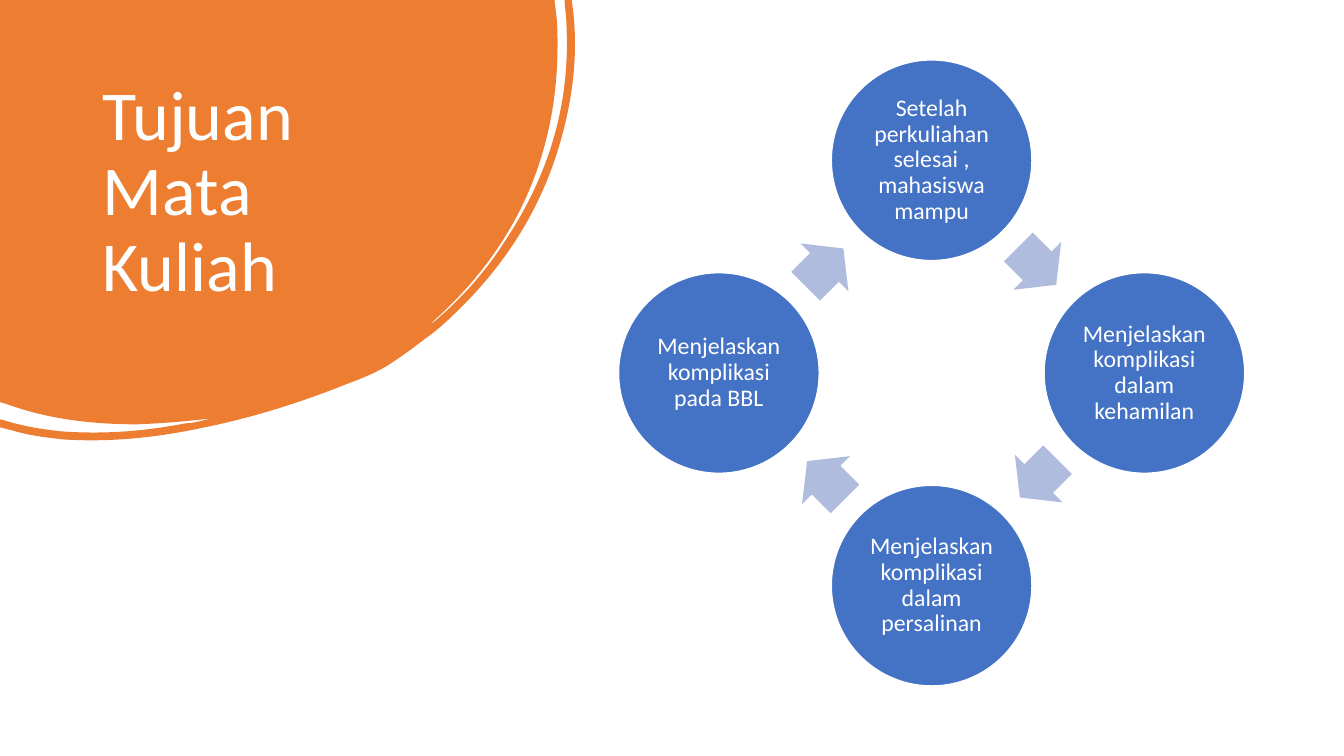
import math

from lxml import etree
from pptx import Presentation
from pptx.dml.color import RGBColor
from pptx.enum import shapes, text
from pptx.oxml.ns import qn
from pptx.util import Inches, Pt

# Content
TITLE = "Tujuan Mata Kuliah"
STEPS = [  # clockwise from the top
    "Setelah perkuliahan selesai , mahasiswa mampu",
    "Menjelaskan komplikasi dalam kehamilan",
    "Menjelaskan komplikasi dalam persalinan",
    "Menjelaskan komplikasi pada BBL",
]

THEME = {
    "font": "Calibri", "title_size": 50, "step_size": 17,
    "white": "FFFFFF", "blob": "ED7D31", "circle": "4472C4", "arrow": "B0BCDE",
}

# Blob outline in inches: two numbers are a line end, six are a Bézier curve
BLOB_WIDTH, BLOB_HEIGHT = 5.71, 4.37
BLOB = [
    (0, 0), (5.5, 0), (5.52, 0.17),
    (5.53, 0.26, 5.53, 0.36, 5.53, 0.45), (5.53, 1.01, 5.42, 1.54, 5.18, 2.04),
    (4.96, 2.49, 4.65, 2.88, 4.27, 3.21), (4.29, 3.21, 4.3, 3.19, 4.32, 3.18),
    (4.59, 2.95, 4.82, 2.69, 5.01, 2.39), (5.43, 1.76, 5.65, 1.07, 5.62, 0.3),
    (5.62, 0.21, 5.61, 0.12, 5.6, 0.03), (5.6, 0), (5.67, 0), (5.68, 0.07),
    (5.74, 0.54, 5.68, 1.02, 5.53, 1.5), (5.33, 2.14, 4.97, 2.68, 4.48, 3.14),
    (4.39, 3.23, 4.29, 3.31, 4.19, 3.38), (4.09, 3.46, 3.99, 3.53, 3.87, 3.61),
    (3.75, 3.69, 3.6, 3.75, 3.44, 3.81), (2.99, 3.99, 2.52, 4.14, 2.03, 4.24),
    (1.57, 4.34, 1.1, 4.39, 0.63, 4.36), (0.45, 4.34, 0.28, 4.32, 0.12, 4.27),
    (0, 4.24), (0, 4.16), (0.04, 4.17),
    (0.23, 4.23, 0.42, 4.26, 0.61, 4.28), (1.03, 4.31, 1.43, 4.28, 1.84, 4.2),
    (1.89, 4.2, 1.93, 4.19, 1.98, 4.18), (2.02, 4.17, 2.06, 4.16, 2.1, 4.15),
    (1.86, 4.18, 1.61, 4.2, 1.36, 4.21), (0.92, 4.21, 0.48, 4.16, 0.07, 4.01),
    (0, 3.99),
]

# Ring of circles, in inches
CENTER_X, CENTER_Y, RADIUS = 9.24, 3.7, 2.11
CIRCLE = 1.99
ARROW_WIDTH, ARROW_HEIGHT = 0.53, 0.67
ARROW_LAG = 0.01  # arrows sit slightly behind the midpoint


def color(name):
    return RGBColor.from_string(THEME[name])


def add_blob(page):
    """Draw the outline through its end points, then bend the curved parts."""
    ends = [(Inches(part[-2]), Inches(part[-1])) for part in BLOB]
    builder = page.shapes.build_freeform(*ends[0])
    builder.add_line_segments(ends[1:], close=True)
    blob = builder.convert_to_shape()
    blob.width, blob.height = Inches(BLOB_WIDTH), Inches(BLOB_HEIGHT)

    outline = next(blob.element.iter(qn("a:path")))
    outline.set("w", str(blob.width))
    outline.set("h", str(blob.height))
    for part, segment in zip(BLOB[1:], outline.findall(qn("a:lnTo"))):
        if len(part) == 6:
            curve = etree.Element(qn("a:cubicBezTo"))
            for x, y in zip(part[::2], part[1::2]):
                etree.SubElement(curve, qn("a:pt"), x=str(Inches(x)), y=str(Inches(y)))
            outline.replace(segment, curve)
    return blob


def paint(shape, fill, line=None):
    shape.shadow.inherit = False
    shape.fill.solid()
    shape.fill.fore_color.rgb = color(fill)
    if line:
        shape.line.color.rgb = color(line)
        shape.line.width = Pt(1)
    else:
        shape.line.fill.background()


def write(box, words, *, size, align, anchor, inset_x, inset_y):
    frame = box.text_frame
    frame.word_wrap = True
    frame.vertical_anchor = anchor
    frame.margin_left = frame.margin_right = Inches(inset_x)
    frame.margin_top = frame.margin_bottom = Inches(inset_y)
    para = frame.paragraphs[0]
    para.alignment = align
    para.line_spacing = 0.9
    span = para.add_run()
    span.text = words
    span.font.name = THEME["font"]
    span.font.size = Pt(THEME[size])
    span.font.color.rgb = color("white")


def add_centered(page, kind, x, y, width, height):
    return page.shapes.add_shape(kind, Inches(x - width / 2), Inches(y - height / 2),
                                 Inches(width), Inches(height))


def main():
    deck = Presentation()
    deck.slide_width, deck.slide_height = Inches(13.33), Inches(7.5)
    page = deck.slides.add_slide(deck.slide_layouts[6])

    # Blob behind the title
    paint(add_blob(page), "blob")

    # Title
    title = page.shapes.add_textbox(Inches(0.92), Inches(0.74), Inches(3.52), Inches(2.22))
    write(title, TITLE, size="title_size", align=text.PP_ALIGN.LEFT,
          anchor=text.MSO_ANCHOR.TOP, inset_x=0.1, inset_y=0.05)

    # Cycle: each circle is followed by the arrow to the next one
    turn = 360 / len(STEPS)
    for index, step in enumerate(STEPS):
        angle = math.radians(index * turn)
        circle = add_centered(page, shapes.MSO_SHAPE.OVAL,
                              CENTER_X + RADIUS * math.sin(angle),
                              CENTER_Y - RADIUS * math.cos(angle), CIRCLE, CIRCLE)
        paint(circle, "circle", line="white")
        write(circle, step, size="step_size", align=text.PP_ALIGN.CENTER,
              anchor=text.MSO_ANCHOR.MIDDLE, inset_x=0.02, inset_y=0.02)

        heading = (index + 0.5) * turn
        angle = math.radians(heading)
        reach = RADIUS * math.cos(math.radians(turn / 2))
        arrow = add_centered(page, shapes.MSO_SHAPE.RIGHT_ARROW,
                             CENTER_X + reach * math.sin(angle) - ARROW_LAG * math.cos(angle),
                             CENTER_Y - reach * math.cos(angle) - ARROW_LAG * math.sin(angle),
                             ARROW_WIDTH, ARROW_HEIGHT)
        arrow.rotation = heading
        arrow.adjustments[0], arrow.adjustments[1] = 0.6, 0.5
        paint(arrow, "arrow")

    deck.save("out.pptx")


if __name__ == "__main__":
    main()
